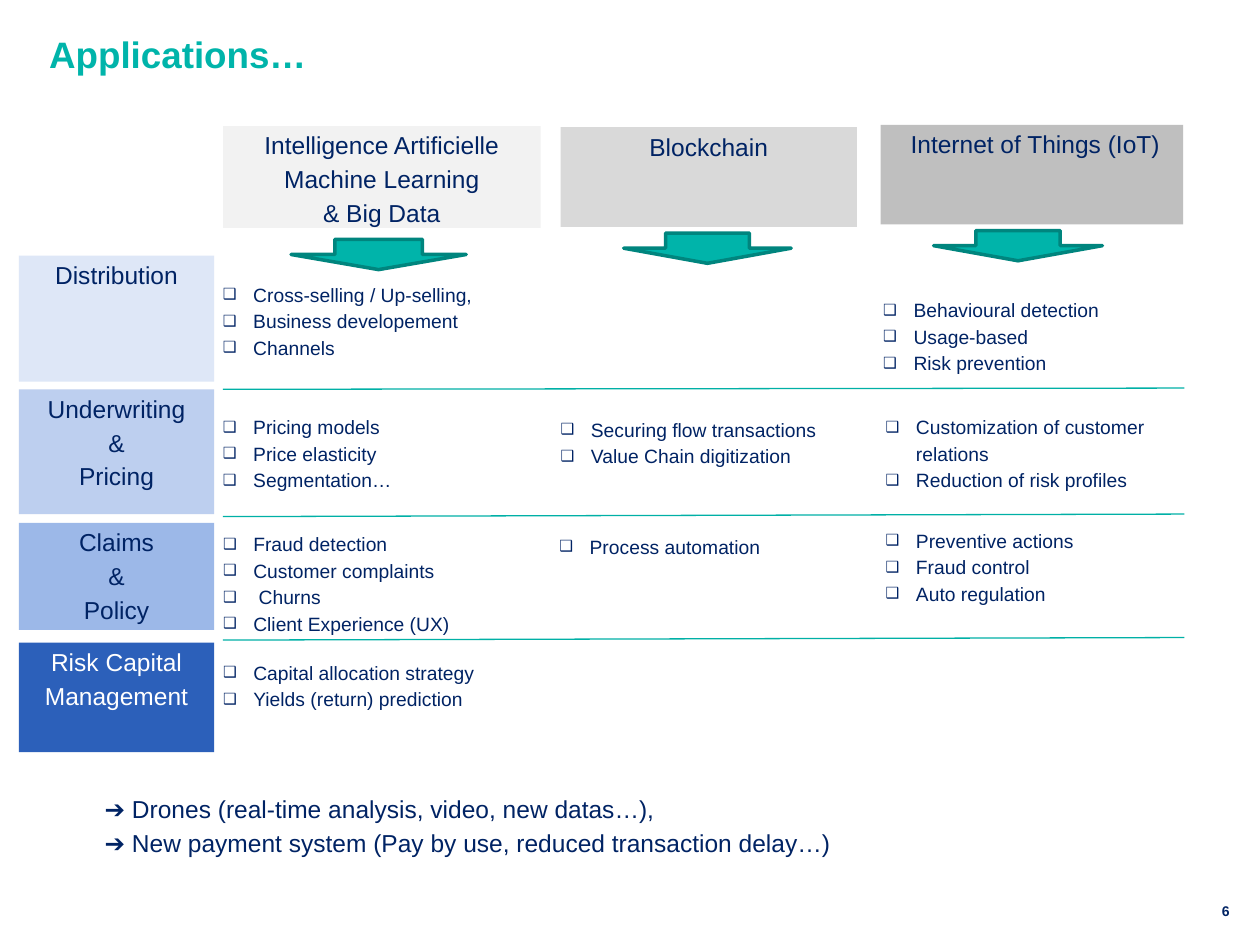
from lxml.etree import SubElement
from pptx import Presentation
from pptx.dml.color import RGBColor
from pptx.enum.shapes import MSO_CONNECTOR, MSO_SHAPE
from pptx.enum.text import MSO_ANCHOR, MSO_AUTO_SIZE, PP_ALIGN
from pptx.oxml.ns import qn
from pptx.util import Inches, Pt

COLORS = {
    "teal": "00B4AA", "teal_edge": "00857E", "rule": "00B0A6",
    "navy": "002364", "white": "FFFFFF",
}
GRID_COLUMNS, GRID_ROWS = 100, 75

ACTIVITIES = [
    (20.3, 10, "DEE7F7", "navy", ["Distribution"]),
    (30.9, 9.9, "BDCFEF", "navy", ["Underwriting", "&", "Pricing"]),
    (41.5, 8.5, "9CB8E8", "navy", ["Claims", "&", "Policy"]),
    (51, 8.7, "2C60BA", "white", ["Risk Capital Management"]),
]

TECHNOLOGIES = [
    ((17.7, 10, 25.2, 8.1), "F2F2F2",
     ["Intelligence Artificielle", "Machine Learning", "& Big Data"],
     (23.1, 19, 13.9, 2.4),
     [((17.7, 22.2, 21.4, 11.3),
       ["Cross-selling / Up-selling,", "Business developement", "Channels"]),
      ((17.7, 32.7, 21.4, 6.5),
       ["Pricing models", "Price elasticity", "Segmentation…"]),
      ((17.7, 42, 26.8, 8.6),
       ["Fraud detection", "Customer complaints", " Churns", "Client Experience (UX)"]),
      ((17.7, 52.2, 26.8, 5.9),
       ["Capital allocation strategy", "Yields (return) prediction"])]),
    ((44.5, 10.1, 23.5, 7.9), "D9D9D9", ["Blockchain"],
     (49.5, 18.5, 13.3, 2.4),
     [((44.5, 32.9, 23.6, 8.5),
       ["Securing flow transactions", "Value Chain digitization"]),
      ((44.4, 42.2, 23.6, 5.4), ["Process automation"])]),
    ((69.9, 9.9, 24, 7.9), "BFBFBF", [" Internet of Things (IoT)"],
     (74.1, 18.3, 13.4, 2.4),
     [((70.1, 23.4, 20.5, 11),
       ["Behavioural detection", "Usage-based", "Risk prevention"]),
      ((70.3, 32.7, 22.4, 8.8),
       ["Customization of customer relations", "Reduction of risk profiles"]),
      ((70.3, 41.7, 23.6, 6.9),
       ["Preventive actions", "Fraud control", "Auto regulation"])]),
]

DIVIDERS = [(30.9, 30.8), (41, 40.8), (50.8, 50.6)]
OUTLOOK = [
    "➔ Drones (real-time analysis, video, new datas…),",
    "➔ New payment system (Pay by use, reduced transaction delay…)",
]


class SlideBuilder:
    """Draws styled elements on a slide divided into a grid."""

    def __init__(self, deck):
        self.font = "Arial"
        self.spacing = 1.15
        self.column = deck.slide_width / GRID_COLUMNS
        self.row = deck.slide_height / GRID_ROWS
        self.slide = deck.slides.add_slide(deck.slide_layouts[5])
        self.shapes = self.slide.shapes

    def start_group(self):
        self.shapes = self.slide.shapes.add_group_shape().shapes

    def end_group(self):
        self.shapes = self.slide.shapes

    def color(self, name):
        return RGBColor.from_string(COLORS.get(name, name))

    def place(self, left, top, width, height):
        return (round(left * self.column), round(top * self.row),
                round(width * self.column), round(height * self.row))

    def fill_text(self, shape, lines, size, color="navy", align=PP_ALIGN.LEFT,
                  bold=False, anchor=MSO_ANCHOR.TOP, spacing=None, bullets=False, indent=0):
        frame = shape.text_frame
        frame.word_wrap = True
        frame.auto_size = MSO_AUTO_SIZE.NONE
        frame.vertical_anchor = anchor
        frame.margin_left = frame.margin_right = 0
        frame.margin_top = frame.margin_bottom = 0
        for index, line in enumerate(lines):
            paragraph = frame.paragraphs[0] if index == 0 else frame.add_paragraph()
            paragraph.alignment = align
            paragraph.line_spacing = spacing or self.spacing
            if indent:
                paragraph._p.get_or_add_pPr().set("marL", str(Inches(indent)))
            if bullets:
                self.add_bullet(paragraph, color)
            run = paragraph.add_run()
            run.text = line
            run.font.name = self.font
            run.font.size = Pt(size)
            run.font.bold = bold
            run.font.color.rgb = self.color(color)

    def add_bullet(self, paragraph, color):
        properties = paragraph._p.get_or_add_pPr()
        properties.set("indent", str(-Inches(0.24)))
        bullet_color = SubElement(properties, qn("a:buClr"))
        SubElement(bullet_color, qn("a:srgbClr"), val=COLORS[color])
        SubElement(properties, qn("a:buSzPct"), val="80000")
        SubElement(properties, qn("a:buFont"), typeface=self.font)
        SubElement(properties, qn("a:buChar"), char="❑")

    def title(self, area, text):
        heading = self.slide.shapes.title
        heading.left, heading.top, heading.width, heading.height = self.place(*area)
        self.fill_text(heading, [text], 21, "teal", bold=True, spacing=1.0)

    def text(self, area, lines, size, **style):
        self.fill_text(self.shapes.add_textbox(*self.place(*area)), lines, size, **style)

    def block(self, kind, area, fill):
        shape = self.shapes.add_shape(kind, *self.place(*area))
        shape.shadow.inherit = False
        shape.fill.solid()
        shape.fill.fore_color.rgb = self.color(fill)
        return shape

    def box(self, area, fill, lines, color="navy"):
        shape = self.block(MSO_SHAPE.RECTANGLE, area, fill)
        shape.line.fill.background()
        self.fill_text(shape, lines, 14, color, PP_ALIGN.CENTER)

    def arrow(self, area):
        shape = self.block(MSO_SHAPE.DOWN_ARROW, area, "teal")
        shape.line.color.rgb = self.color("teal_edge")
        shape.line.width = Pt(2)

    def divider(self, left, start, right, end):
        line = self.shapes.add_connector(
            MSO_CONNECTOR.STRAIGHT, *self.place(left, start, right, end))
        line.line.color.rgb = self.color("rule")
        line.line.width = Pt(0.75)
        SubElement(line._element.spPr, qn("a:effectLst"))


def main():
    deck = Presentation()
    deck.slide_width, deck.slide_height = Inches(10), Inches(7.5)
    page = SlideBuilder(deck)
    page.title((3.9, 2.5, 92.2, 4.3), "Applications…")
    page.text((94.1, 69.4, 3.5, 3.6), ["6"], 8, bold=True, align=PP_ALIGN.RIGHT,
              anchor=MSO_ANCHOR.BOTTOM, spacing=1.0)

    for top, height, fill, color, label in ACTIVITIES:
        page.box((1.5, top, 15.5, height), fill, label, color)

    for header_area, fill, header, arrow_area, uses in TECHNOLOGIES:
        page.start_group()
        page.box(header_area, fill, header)
        page.arrow(arrow_area)
        for area, items in uses:
            page.text(area, items, 11, bullets=True, indent=0.24)
        page.end_group()

    for start, end in DIVIDERS:
        page.divider(17.7, start, 94, end)

    page.text((5.9, 62.7, 89.8, 6.3), OUTLOOK, 14, align=PP_ALIGN.JUSTIFY, indent=0.24)
    deck.save("out.pptx")


if __name__ == "__main__":
    main()
